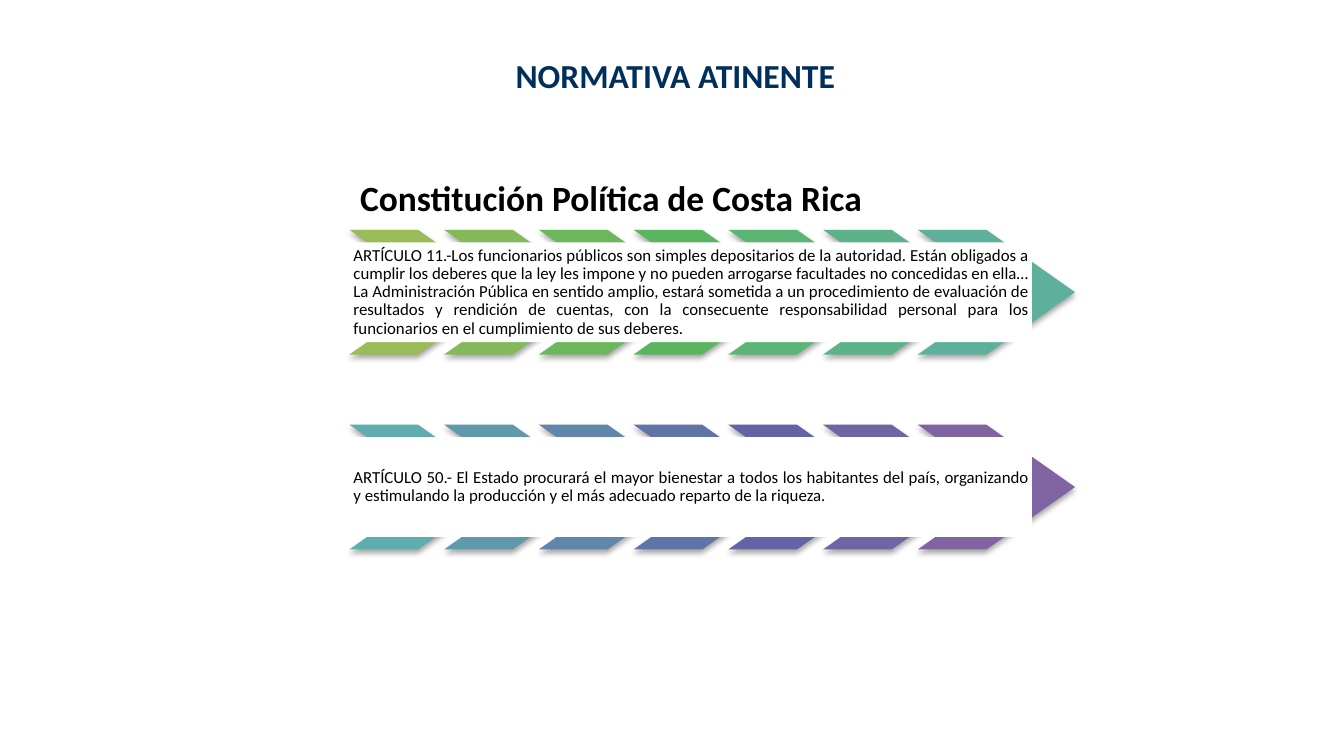
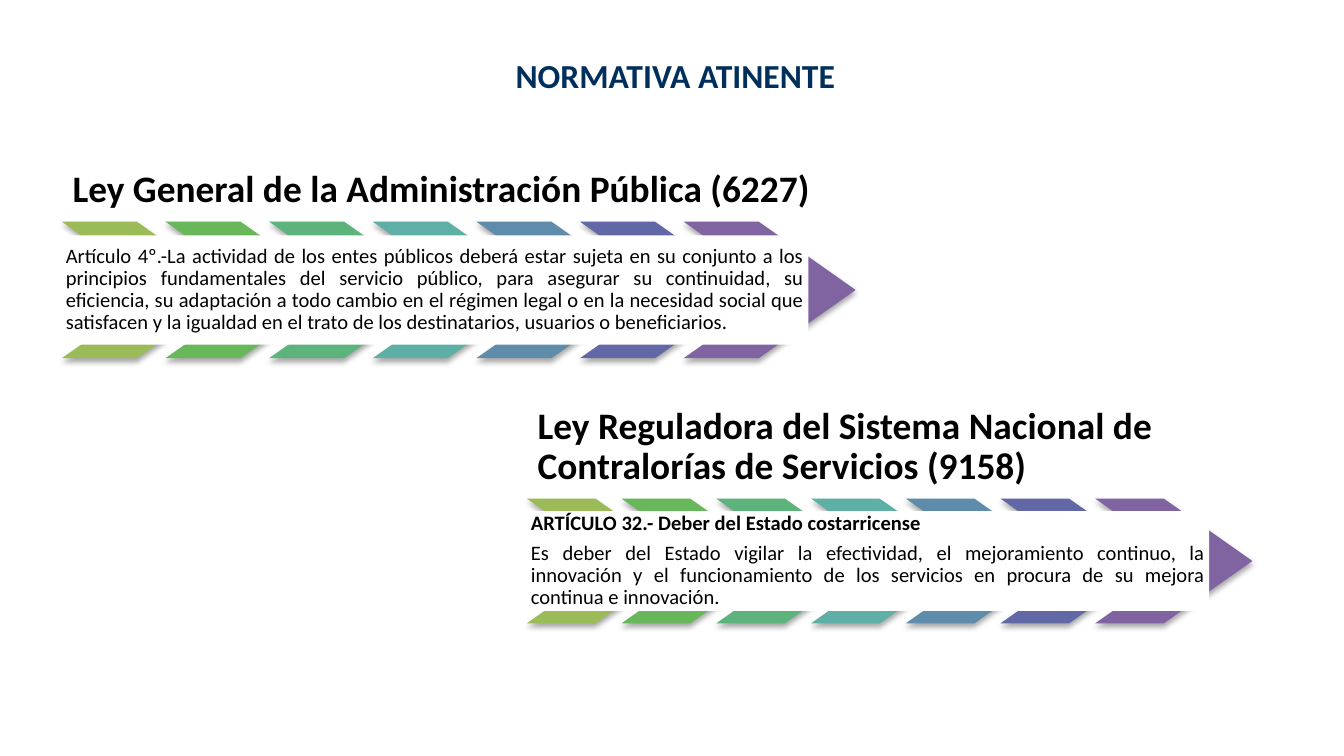
from lxml import etree
from pptx import Presentation
from pptx.dml.color import RGBColor
from pptx.enum.shapes import MSO_SHAPE
from pptx.enum.text import MSO_ANCHOR, PP_ALIGN
from pptx.oxml.ns import qn
from pptx.util import Inches, Pt

CHEVRON, RECT = MSO_SHAPE.CHEVRON, MSO_SHAPE.RECTANGLE
TOP, MIDDLE, BOTTOM = MSO_ANCHOR.TOP, MSO_ANCHOR.MIDDLE, MSO_ANCHOR.BOTTOM
LEFT, CENTER, JUSTIFY = PP_ALIGN.LEFT, PP_ALIGN.CENTER, PP_ALIGN.JUSTIFY

# Content
TITLE = "NORMATIVA ATINENTE"
GREENS = "9BBB59 83B95A 6CB75B 5BB560 5CB475 5DB28A 5EB09D".split()
PURPLES = "5FADAE 5F99AC 6086AA 6174A8 6264A6 7163A4 8064A2".split()
RAINBOW = "9BBB59 69B75B 5CB37C 5EAFA6 608CAB 6267A6 8064A2".split()

# Each band: left and top of its chevrons, chevron width, colours,
# heading (text, size, width, height) and body paragraphs (text, bold)
SLIDES = [
    [
        dict(left=2.6, top=1.71, unit=1.17, colors=GREENS, size=9,
             heading=("Constitución Política de Costa Rica", 19, 5.01, 0.46),
             body=[("ARTÍCULO 11.-Los funcionarios públicos son simples depositarios "
                    "de la autoridad. Están obligados a cumplir los deberes que la ley "
                    "les impone y no pueden arrogarse facultades no concedidas en ella… "
                    "La Administración Pública en sentido amplio, estará sometida a un "
                    "procedimiento de evaluación de resultados y rendición de cuentas, "
                    "con la consecuente responsabilidad personal para los funcionarios "
                    "en el cumplimiento de sus deberes.", False)]),
        dict(left=2.6, top=3.16, unit=1.17, colors=PURPLES, size=9, heading=None,
             body=[("ARTÍCULO 50.- El Estado procurará el mayor bienestar a todos los "
                    "habitantes del país, organizando y estimulando la producción y el "
                    "más adecuado reparto de la riqueza.", False)]),
    ],
    [
        dict(left=0.46, top=1.65, unit=1.28, colors=RAINBOW, size=11,
             heading=("Ley General de la Administración Pública (6227)", 20, 5.71, 0.82),
             body=[("Artículo 4º.-La actividad de los entes públicos deberá estar sujeta "
                    "en su conjunto a los principios fundamentales del servicio público, "
                    "para asegurar su continuidad, su eficiencia, su adaptación a todo "
                    "cambio en el régimen legal o en la necesidad social que satisfacen y "
                    "la igualdad en el trato de los destinatarios, usuarios o "
                    "beneficiarios.", False)]),
        dict(left=3.92, top=3.71, unit=1.17, colors=RAINBOW, size=11,
             heading=("Ley Reguladora del Sistema Nacional de Contralorías de Servicios "
                      "(9158)", 20, 5.01, 0.46),
             body=[("ARTÍCULO 32.- Deber del Estado costarricense", True),
                   ("Es deber del Estado vigilar la efectividad, el mejoramiento continuo, "
                    "la innovación y el funcionamiento de los servicios en procura de su "
                    "mejora continua e innovación.", False)]),
    ],
]

# Shared style; band proportions follow from the chevron width
FONT, NAVY, BLACK, WHITE = "Calibri", "002F5C", "000000", "FFFFFF"
PITCH, HEIGHT, BODY_WIDTH = 1 / 1.66, 1 / 1.26, 4.34
BODY_INSET, NOTCH = 0.1, 0.71


def rgb(color):
    return RGBColor.from_string(color)


def write(sp, paragraphs, size, color=BLACK, align=LEFT, anchor=MIDDLE,
          margin=0, spacing=0.9):
    tf = sp.text_frame
    tf.word_wrap = True
    tf.vertical_anchor = anchor
    tf.margin_left = tf.margin_right = tf.margin_top = tf.margin_bottom = Inches(margin)
    for i, (text, bold) in enumerate(paragraphs):
        p = tf.paragraphs[0] if i == 0 else tf.add_paragraph()
        p.text = text
        p.alignment = align
        p.line_spacing = spacing
        p.space_after = Pt(0.35 * size)
        p.font.name, p.font.size, p.font.bold = FONT, Pt(size), bold
        p.font.color.rgb = rgb(color)


def textbox(slide, box, *args, **style):
    sp = slide.shapes.add_textbox(*map(Inches, box))
    write(sp, *args, **style)


def block(slide, kind, box, color):
    sp = slide.shapes.add_shape(kind, *map(Inches, box))
    sp.shadow.inherit = False
    sp.fill.solid()
    sp.fill.fore_color.rgb = rgb(color)
    sp.line.fill.background()
    return sp


def drop_shadow(sp):
    effects = sp._element.spPr.find(qn("a:effectLst"))
    shadow = etree.SubElement(effects, qn("a:outerShdw"), blurRad=str(Pt(3.1)),
                              dist=str(Pt(1.8)), dir="5400000", rotWithShape="0")
    color = etree.SubElement(shadow, qn("a:srgbClr"), val=BLACK)
    etree.SubElement(color, qn("a:alpha"), val="35000")


def add_band(slide, left, top, unit, colors, size, heading, body):
    height = HEIGHT * unit
    if heading:
        text, heading_size, w, h = heading
        textbox(slide, (left, top - h, w, h), [(text, True)], heading_size,
                anchor=BOTTOM, margin=0.08)
    for i, color in enumerate(colors):
        sp = block(slide, CHEVRON, (left + i * PITCH * unit, top, unit, height), color)
        sp.adjustments[0] = NOTCH
        drop_shadow(sp)
    # White panel that leaves only the chevron edges and the last tip in view
    panel = block(slide, RECT, (left, top + BODY_INSET * height, BODY_WIDTH * unit,
                                (1 - 2 * BODY_INSET) * height), WHITE)
    write(panel, body, size, align=JUSTIFY, margin=0.03)


def main():
    prs = Presentation()
    prs.slide_width = Inches(10)
    prs.slide_height = prs.slide_width * 9 // 16
    for bands in SLIDES:
        slide = prs.slides.add_slide(prs.slide_layouts[6])
        textbox(slide, (1.63, 0.41, 6.79, 0.5), [(TITLE, True)], 18, color=NAVY,
                align=CENTER, anchor=TOP, spacing=1.0)
        for band in bands:
            add_band(slide, **band)
    prs.save("out.pptx")


if __name__ == "__main__":
    main()
